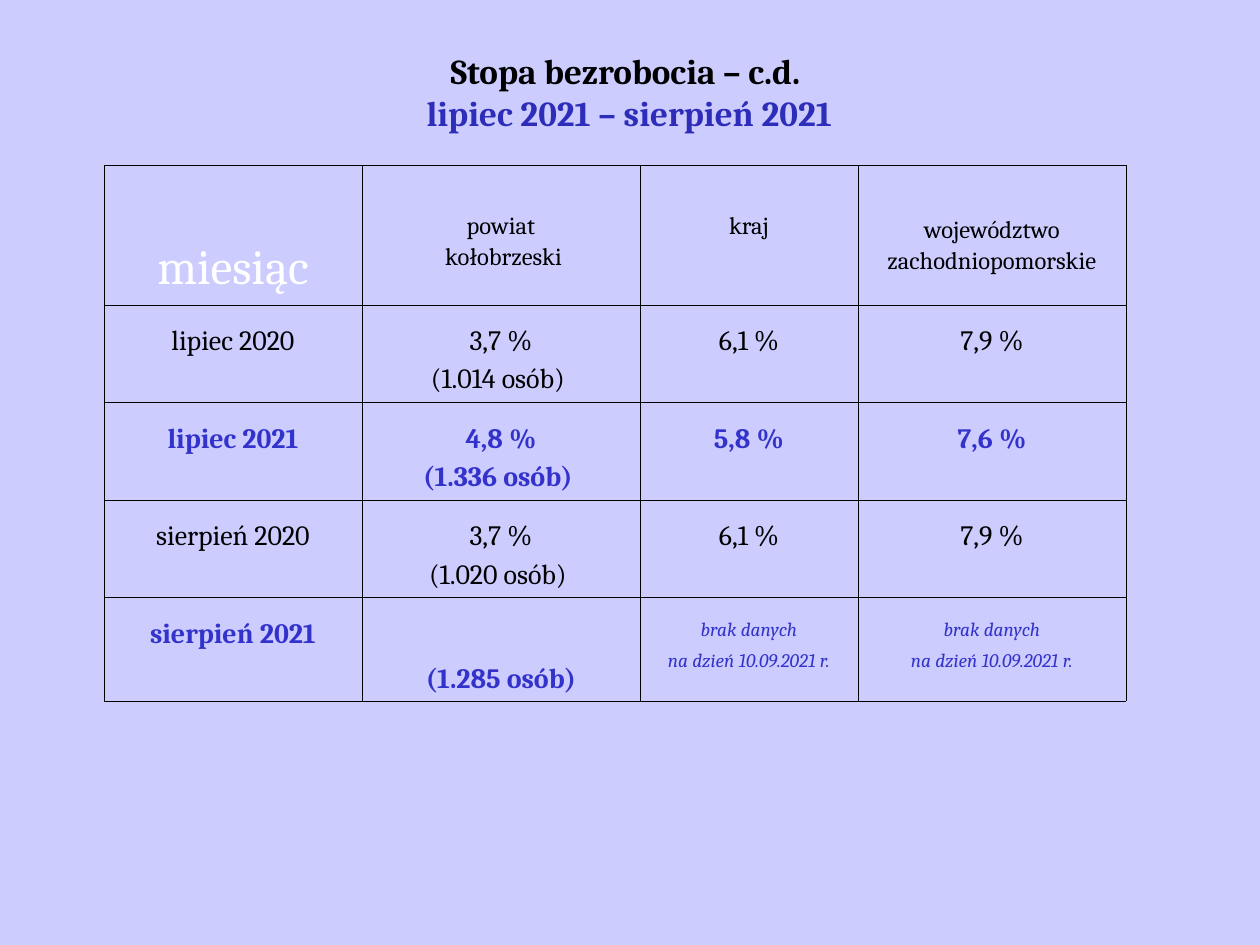
from dataclasses import dataclass

from lxml import etree
from pptx import Presentation
from pptx.dml.color import RGBColor
from pptx.enum.text import MSO_ANCHOR, PP_ALIGN
from pptx.oxml.ns import qn
from pptx.util import Pt

EMU_PER_PX = 914400 / 126
CENTER = PP_ALIGN.CENTER
TOP, MIDDLE = MSO_ANCHOR.TOP, MSO_ANCHOR.MIDDLE
FONT = "Cambria"
BACKGROUND, BLACK, WHITE = "CCCCFF", "000000", "FFFFFF"
TITLE_BLUE, CURRENT_BLUE = "2D2DB9", "3333CC"
INNER_LINE, OUTER_LINE = 0.11, 0.23
SIDE_MARGIN, EDGE_MARGIN = 13, 6


@dataclass(frozen=True)
class Style:
    size: int
    color: str = BLACK
    bold: bool = False
    italic: bool = False
    line_spacing: float = 0.81
    space_before: int = 7


@dataclass(frozen=True)
class Entry:
    lines: tuple[str, ...]
    style: Style
    top_margin: int = 25


def px(length: int) -> int:
    return round(length * EMU_PER_PX)


def rgb(color: str) -> RGBColor:
    return RGBColor.from_string(color)


def add_run(paragraph, text: str, style: Style) -> None:
    run = paragraph.add_run()
    run.text = text
    run.font.name = FONT
    run.font.size = Pt(style.size)
    run.font.bold = style.bold
    run.font.italic = style.italic
    run.font.color.rgb = rgb(style.color)


def add_border(cell, side: str, width: float) -> None:
    line = etree.SubElement(cell._tc.get_or_add_tcPr(), qn(f"a:ln{side}"), w=str(Pt(width)))
    fill = etree.SubElement(line, qn("a:solidFill"))
    etree.SubElement(fill, qn("a:srgbClr"), val=BLACK)


def write_entry(cell, entry: Entry) -> None:
    cell.margin_left = cell.margin_right = px(SIDE_MARGIN)
    cell.margin_top, cell.margin_bottom = px(entry.top_margin), px(EDGE_MARGIN)
    cell.vertical_anchor = TOP
    frame = cell.text_frame
    for index, text in enumerate(entry.lines):
        paragraph = frame.add_paragraph() if index else frame.paragraphs[0]
        paragraph.alignment = CENTER
        paragraph.line_spacing = entry.style.line_spacing
        paragraph.space_before = Pt(entry.style.space_before)
        add_run(paragraph, text, entry.style)


def add_title(slide) -> None:
    box = slide.shapes.add_textbox(px(63), px(18), px(1133), px(147))
    frame = box.text_frame
    frame.word_wrap = True
    frame.vertical_anchor = MIDDLE
    paragraph = frame.paragraphs[0]
    paragraph.alignment = CENTER
    add_run(paragraph, "Stopa bezrobocia – c.d. ", Style(20, BLACK, bold=True))
    paragraph.add_line_break()
    add_run(paragraph, "lipiec 2021 – sierpień 2021", Style(20, TITLE_BLUE, bold=True))


def add_rate_table(slide, rows: list[list[Entry]], widths: list[int], heights: list[int]) -> None:
    table = slide.shapes.add_table(
        len(rows), len(widths), px(104), px(165), px(sum(widths)), px(sum(heights))
    ).table
    table.first_row = table.horz_banding = False
    for column, width in zip(table.columns, widths):
        column.width = px(width)
    for row, height in zip(table.rows, heights):
        row.height = px(height)
    last_column = len(widths) - 1
    for r, entries in enumerate(rows):
        for c, entry in enumerate(entries):
            cell = table.cell(r, c)
            write_entry(cell, entry)
            outer_sides = {"L": c == 0, "R": c == last_column, "T": r == 0, "B": False}
            for side, is_outer in outer_sides.items():
                add_border(cell, side, OUTER_LINE if is_outer else INNER_LINE)
            cell.fill.background()


# Text styles
MONTH_HEADING = Style(28, WHITE, line_spacing=1.0, space_before=0)
HEADING = Style(14, space_before=5)
PREVIOUS = Style(16)
CURRENT = Style(16, CURRENT_BLUE, bold=True)
MISSING = Style(11, CURRENT_BLUE, italic=True)

# Table content
HEADINGS = [
    Entry(("miesiąc",), MONTH_HEADING, 75),
    Entry(("powiat", " kołobrzeski"), HEADING, 51),
    Entry(("kraj",), HEADING, 51),
    Entry(("województwo", "zachodniopomorskie"), HEADING, 55),
]
RATES = [
    (PREVIOUS, "lipiec 2020", ("3,7 %", "(1.014 osób) "), "6,1 %", "7,9 %"),
    (CURRENT, "lipiec 2021", ("4,8 %", "(1.336 osób) "), "5,8 %", "7,6 %"),
    (PREVIOUS, "sierpień 2020", ("3,7 %", "(1.020 osób) "), "6,1 %", "7,9 %"),
]
NO_DATA = Entry(("brak danych", "na dzień 10.09.2021 r."), MISSING)
LATEST = [
    Entry(("sierpień 2021",), CURRENT),
    Entry(("(1.285 osób)",), CURRENT, 70),
    NO_DATA,
    NO_DATA,
]


def main() -> None:
    presentation = Presentation()
    presentation.slide_width, presentation.slide_height = px(1260), px(945)
    slide = presentation.slides.add_slide(presentation.slide_layouts[6])
    slide.background.fill.solid()
    slide.background.fill.fore_color.rgb = rgb(BACKGROUND)

    add_title(slide)
    months = [
        [Entry((month,), style), Entry(county, style), Entry((country,), style), Entry((region,), style)]
        for style, month, county, country, region in RATES
    ]
    add_rate_table(
        slide,
        [HEADINGS, *months, LATEST],
        widths=[258, 278, 218, 268],
        heights=[139, 96, 96, 97, 102],
    )
    presentation.save("out.pptx")


if __name__ == "__main__":
    main()
